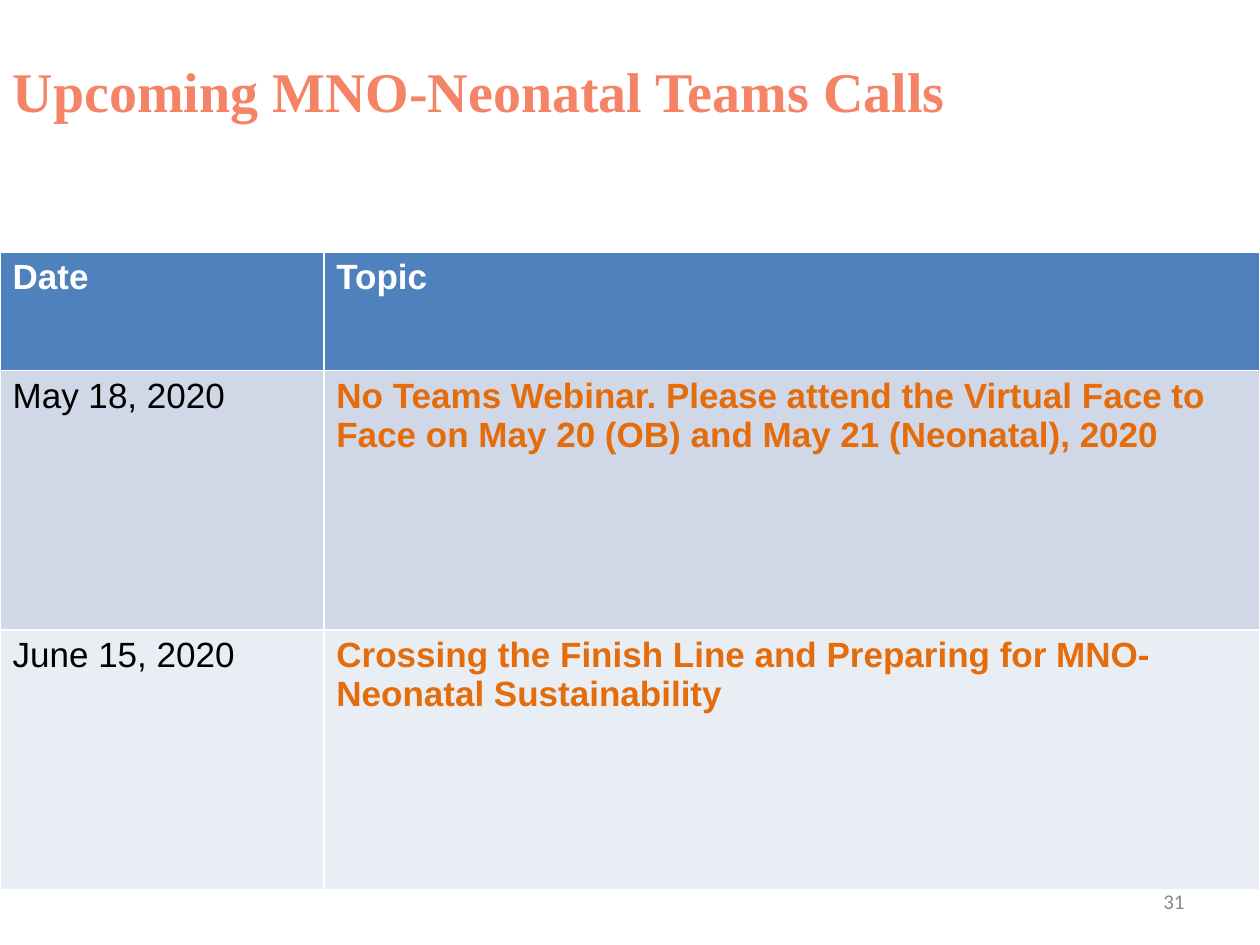
from dataclasses import dataclass
from typing import Any

from pptx import Presentation
from pptx.dml.color import RGBColor
from pptx.enum.text import MSO_ANCHOR, PP_ALIGN
from pptx.util import Inches, Pt

WIDTH, HEIGHT = 10, 7.5
COLORS = {
    "title": "F58466",
    "header": "4F81BD",
    "odd": "D0D8E8",
    "even": "E9EDF4",
    "white": "FFFFFF",
    "black": "000000",
    "topic": "E46C0A",
    "number": "898989",
}
CALLS = [
    ("Date", "Topic"),
    ("May 18, 2020", "No Teams Webinar. Please attend the Virtual Face to Face "
                     "on May 20 (OB) and May 21 (Neonatal), 2020"),
    ("June 15, 2020", "Crossing the Finish Line and Preparing for "
                      "MNO-Neonatal Sustainability"),
]


@dataclass
class Deck:
    """Style and current slide; lengths are shares of the slide's size."""
    s: Any
    body_font: str = "Arial"
    title_font: str = "Times New Roman"
    number_font: str = "Calibri"

    def box(self, x, y, w, h):
        return (Inches(x * WIDTH), Inches(y * HEIGHT),
                Inches(w * WIDTH), Inches(h * HEIGHT))

    def set_text(self, tf, text, font, size, color, bold=False, align=PP_ALIGN.LEFT):
        tf.word_wrap = True
        p = tf.paragraphs[0]
        p.text = text
        p.alignment = align
        p.font.name = font
        p.font.size = Pt(size)
        p.font.bold = bold
        p.font.color.rgb = RGBColor.from_string(COLORS[color])

    def title(self, text, x, y, w, h):
        sp = self.s.shapes.title
        sp.left, sp.top, sp.width, sp.height = self.box(x, y, w, h)
        sp.text_frame.vertical_anchor = MSO_ANCHOR.MIDDLE
        self.set_text(sp.text_frame, text, self.title_font, 32, "title", True)

    def table(self, rows, x, y, col_shares, row_shares):
        frame = self.s.shapes.add_table(
            len(rows), len(col_shares),
            *self.box(x, y, sum(col_shares), sum(row_shares)))
        table = frame.table
        for column, share in zip(table.columns, col_shares):
            column.width = Inches(share * WIDTH)
        for i, (row, share) in enumerate(zip(rows, row_shares)):
            table.rows[i].height = Inches(share * HEIGHT)
            fill = "header" if i == 0 else "odd" if i % 2 else "even"
            for j, text in enumerate(row):
                cell = table.cell(i, j)
                cell.fill.solid()
                cell.fill.fore_color.rgb = RGBColor.from_string(COLORS[fill])
                color = "white" if i == 0 else "topic" if j else "black"
                self.set_text(cell.text_frame, text, self.body_font, 20, color,
                              color != "black")

    def page_number(self, number, x, y, w, h):
        tf = self.s.shapes.add_textbox(*self.box(x, y, w, h)).text_frame
        tf.vertical_anchor = MSO_ANCHOR.MIDDLE
        self.set_text(tf, str(number), self.number_font, 12, "number",
                      align=PP_ALIGN.RIGHT)


def main():
    prs = Presentation()
    prs.slide_width, prs.slide_height = Inches(WIDTH), Inches(HEIGHT)
    deck = Deck(prs.slides.add_slide(prs.slide_layouts[5]))
    deck.title("Upcoming MNO-Neonatal Teams Calls", 0, 0.01, 0.79, 0.17)
    deck.table(CALLS, 0, 2 / HEIGHT, (0.257, 0.743),
               [h / HEIGHT for h in (0.94, 2.06, 2.06)])
    deck.page_number(31, 0.717, 6.95 / HEIGHT, 0.233, 0.4 / HEIGHT)
    prs.save("out.pptx")


if __name__ == "__main__":
    main()
